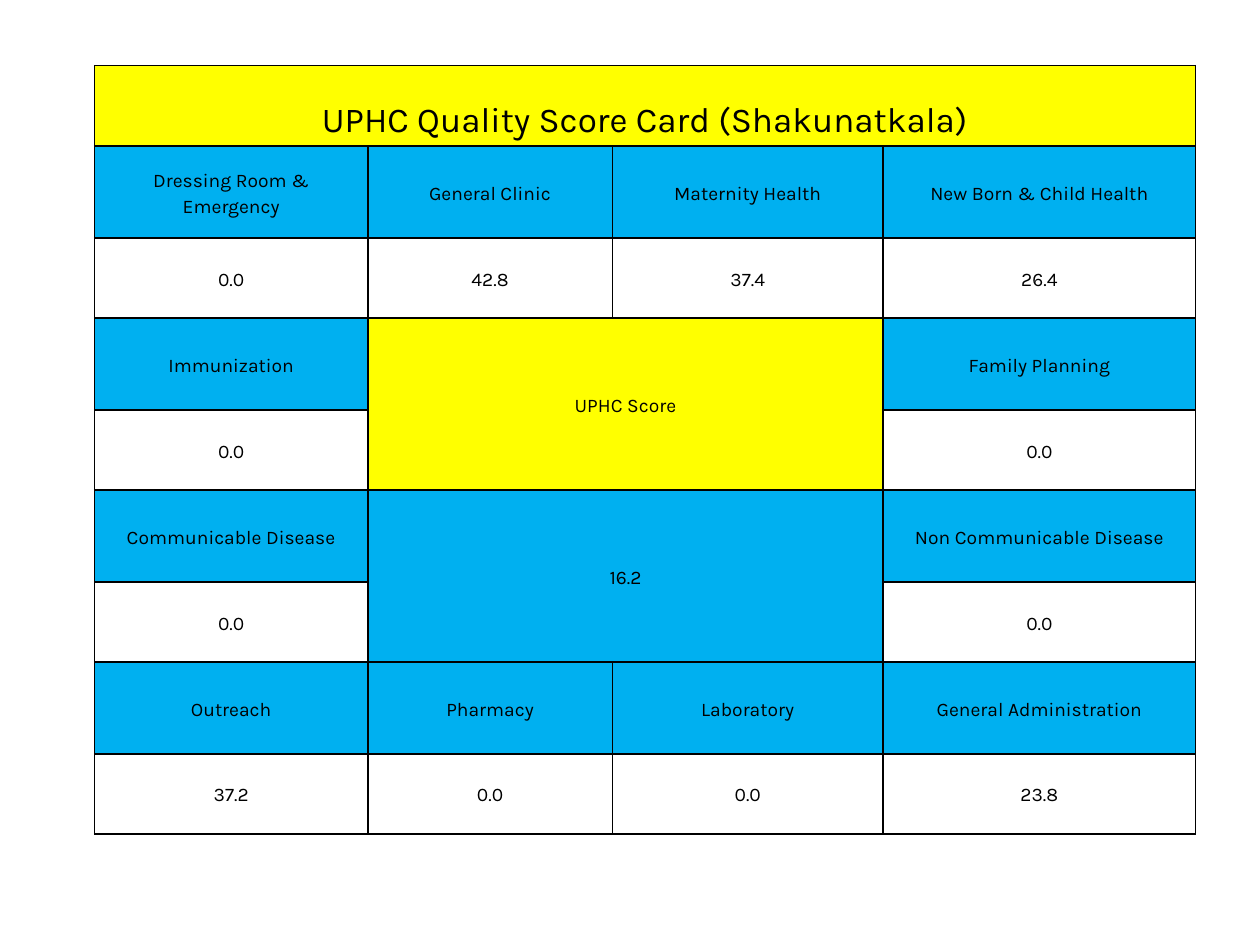
from dataclasses import dataclass

from lxml import etree
from pptx import Presentation
from pptx.dml.color import RGBColor
from pptx.enum.text import MSO_ANCHOR, PP_ALIGN
from pptx.oxml.ns import qn
from pptx.util import Inches, Pt

MIDDLE = MSO_ANCHOR.MIDDLE
CENTER = PP_ALIGN.CENTER

TITLE = "UPHC Quality Score Card (Shakunatkala)"
BANDS = [
    {0: ("Dressing Room & Emergency", "0.0"), 1: ("General Clinic", "42.8"),
     2: ("Maternity Health", "37.4"), 3: ("New Born & Child Health", "26.4")},
    {0: ("Immunization", "0.0"), 3: ("Family Planning", "0.0")},
    {0: ("Communicable Disease", "0.0"), 3: ("Non Communicable Disease", "0.0")},
    {0: ("Outreach", "37.2"), 1: ("Pharmacy", "0.0"),
     2: ("Laboratory", "0.0"), 3: ("General Administration", "23.8")},
]
OVERALL_LABEL, OVERALL_SCORE = "UPHC Score", "16.2"


@dataclass(frozen=True)
class Theme:
    font: str = "Karla"
    ink: str = "000000"
    highlight: str = "FFFF00"
    heading: str = "00B0F0"
    title_size: int = 20
    body_size: int = 11
    line_spacing: float = 1.15
    border: int = 1


THEME = Theme()
SLIDE_WIDTH, SLIDE_HEIGHT = 10, 7.5
LEFT, TOP, HEIGHT = 0.75, 0.52, 6.1
COLUMNS = (2.17, 1.94, 2.15, 2.48)
TITLE_ROW, LABEL_ROW = 0.64, 0.73
SCORE_ROW = (HEIGHT - TITLE_ROW) / len(BANDS) - LABEL_ROW
ROWS = [TITLE_ROW] + [LABEL_ROW, SCORE_ROW] * len(BANDS)
CELL_FORMAT = {
    "vertical_anchor": MIDDLE,
    "margin_left": Inches(0.07),
    "margin_right": Inches(0.07),
    "margin_top": 0,
    "margin_bottom": 0,
}
TITLE_DROP = 0.19


def draw_borders(cell):
    properties = cell._tc.get_or_add_tcPr()
    for position, side in enumerate(("lnL", "lnR", "lnT", "lnB")):
        line = etree.Element(qn(f"a:{side}"), w=str(Pt(THEME.border)))
        fill = etree.SubElement(line, qn("a:solidFill"))
        etree.SubElement(fill, qn("a:srgbClr"), val=THEME.ink)
        properties.insert(position, line)


def format_cell(cell):
    for attribute, value in CELL_FORMAT.items():
        setattr(cell, attribute, value)
    cell.fill.background()
    draw_borders(cell)


def write(cell, wording, fill=None, size=THEME.body_size):
    if fill:
        cell.fill.solid()
        cell.fill.fore_color.rgb = RGBColor.from_string(fill)
    paragraph = cell.text_frame.paragraphs[0]
    paragraph.alignment = CENTER
    paragraph.line_spacing = THEME.line_spacing
    run = paragraph.add_run()
    run.text = wording
    run.font.name = THEME.font
    run.font.size = Pt(size)
    run.font.color.rgb = RGBColor.from_string(THEME.ink)


def build_score_card(slide):
    card = slide.shapes.add_table(
        len(ROWS), len(COLUMNS), Inches(LEFT), Inches(TOP),
        Inches(sum(COLUMNS)), Inches(HEIGHT),
    ).table
    card.first_row = False
    card.horz_banding = False
    for column, width in zip(card.columns, COLUMNS):
        column.width = Inches(width)
    for row, height in zip(card.rows, ROWS):
        row.height = Inches(height)
    for cell in card.iter_cells():
        format_cell(cell)

    heading = card.cell(0, 0)
    heading.merge(card.cell(0, len(COLUMNS) - 1))
    heading.margin_top = Inches(TITLE_DROP)
    write(heading, TITLE, THEME.highlight, THEME.title_size)

    for band, services in enumerate(BANDS):
        label_row = 1 + 2 * band
        for column, (service, score) in services.items():
            write(card.cell(label_row, column), service, THEME.heading)
            write(card.cell(label_row + 1, column), score)

    for row, wording, fill in (
        (3, OVERALL_LABEL, THEME.highlight),
        (5, OVERALL_SCORE, THEME.heading),
    ):
        overall = card.cell(row, 1)
        overall.merge(card.cell(row + 1, 2))
        write(overall, wording, fill)


def main():
    deck = Presentation()
    deck.slide_width = Inches(SLIDE_WIDTH)
    deck.slide_height = Inches(SLIDE_HEIGHT)
    build_score_card(deck.slides.add_slide(deck.slide_layouts[6]))
    deck.save("out.pptx")


if __name__ == "__main__":
    main()
